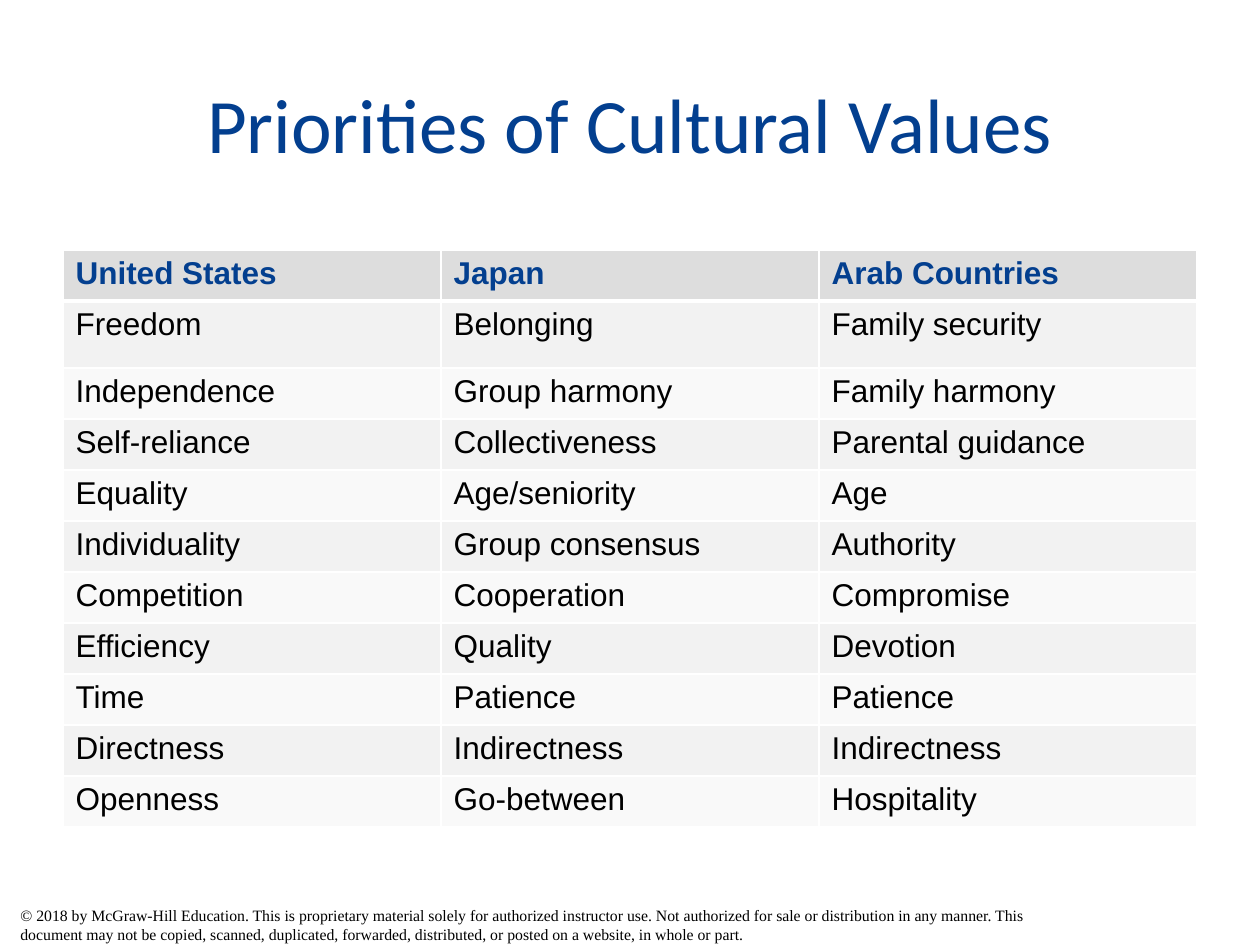
from dataclasses import dataclass

from lxml import etree
from pptx import Presentation
from pptx import util as u
from pptx.dml.color import RGBColor
from pptx.enum import text
from pptx.oxml.ns import qn

PX = 914400 / 126


def px(n: int) -> int:
    return u.Emu(round(n * PX))


@dataclass(frozen=True)
class Style:
    name: str
    size: int
    color: str
    bold: bool = False


@dataclass(frozen=True)
class Theme:
    title = Style("Calibri", 44, "033F8F")
    header = Style("Arial", 18, "033F8F", True)
    body = Style("Arial", 18, "000000")
    legal = Style("Times New Roman", 9, "000000")
    header_fill = "DDDDDD"
    bands = ("F2F2F2", "F9F9F9")
    border = "FFFFFF"
    thin = 1
    thick = 3


@dataclass(frozen=True)
class Box:
    x: int
    y: int
    w: int
    h: int

    def emu(self) -> tuple[int, ...]:
        return tuple(px(n) for n in (self.x, self.y, self.w, self.h))


T = Theme()
TITLE_BOX = Box(63, 70, 1134, 158)
TABLE_BOX = Box(63, 250, 1134, 577)
LEGAL_BOX = Box(8, 900, 1062, 24)
ROW_H, FIRST_ROW_H = 51, 67

VALUES = (
    ("United States", "Japan", "Arab Countries"),
    ("Freedom", "Belonging", "Family security"),
    ("Independence", "Group harmony", "Family harmony"),
    ("Self-reliance", "Collectiveness", "Parental guidance"),
    ("Equality", "Age/seniority", "Age"),
    ("Individuality", "Group consensus", "Authority"),
    ("Competition", "Cooperation", "Compromise"),
    ("Efficiency", "Quality", "Devotion"),
    ("Time", "Patience", "Patience"),
    ("Directness", "Indirectness", "Indirectness"),
    ("Openness", "Go-between", "Hospitality"),
)
LEGAL = (
    "© 2018 by McGraw-Hill Education. This is proprietary material solely for "
    "authorized instructor use. Not authorized for sale or distribution in any "
    "manner. This document may not be copied, scanned, duplicated, forwarded, "
    "distributed, or posted on a website, in whole or part."
)


def write(tf, words: str, style: Style, align=text.PP_ALIGN.LEFT) -> None:
    p = tf.paragraphs[0]
    p.alignment = align
    r = p.add_run()
    r.text = words
    fmt = {"name": style.name, "size": u.Pt(style.size), "bold": style.bold}
    for key, value in fmt.items():
        setattr(r.font, key, value)
    r.font.color.rgb = RGBColor.from_string(style.color)


def add_text(s, box: Box, words: str, style: Style, align=text.PP_ALIGN.LEFT) -> None:
    tf = s.shapes.add_textbox(*box.emu()).text_frame
    tf.word_wrap = True
    tf.vertical_anchor = text.MSO_ANCHOR.TOP
    write(tf, words, style, align)


def set_borders(cell, widths: dict[str, int]) -> None:
    """Insert the border lines ahead of the cell fill, as the schema asks."""
    tc_pr = cell._tc.get_or_add_tcPr()
    for i, (side, width) in enumerate(widths.items()):
        ln = etree.Element(qn(f"a:ln{side}"), w=str(u.Pt(width)))
        fill = etree.SubElement(ln, qn("a:solidFill"))
        etree.SubElement(fill, qn("a:srgbClr"), val=T.border)
        tc_pr.insert(i, ln)


def add_values_table(s, box: Box, rows: tuple[tuple[str, ...], ...]) -> None:
    table = s.shapes.add_table(len(rows), len(rows[0]), *box.emu()).table
    for col in table.columns:
        col.width = px(box.w // len(rows[0]))
    for i, row in enumerate(rows):
        table.rows[i].height = px(FIRST_ROW_H if i == 1 else ROW_H)
        style = T.body if i else T.header
        color = T.bands[(i - 1) % 2] if i else T.header_fill
        widths = dict.fromkeys("LRTB", T.thin)
        if i < 2:
            widths["T" if i else "B"] = T.thick
        for j, words in enumerate(row):
            cell = table.cell(i, j)
            cell.fill.solid()
            cell.fill.fore_color.rgb = RGBColor.from_string(color)
            set_borders(cell, widths)
            write(cell.text_frame, words, style)


def main() -> None:
    prs = Presentation()
    prs.slide_width, prs.slide_height = px(1260), px(945)
    s = prs.slides.add_slide(prs.slide_layouts[6])

    # Copyright line
    add_text(s, LEGAL_BOX, LEGAL, T.legal)

    # Title
    add_text(s, TITLE_BOX, "Priorities of Cultural Values", T.title, text.PP_ALIGN.CENTER)

    # Values by culture
    add_values_table(s, TABLE_BOX, VALUES)

    prs.save("out.pptx")


if __name__ == "__main__":
    main()
